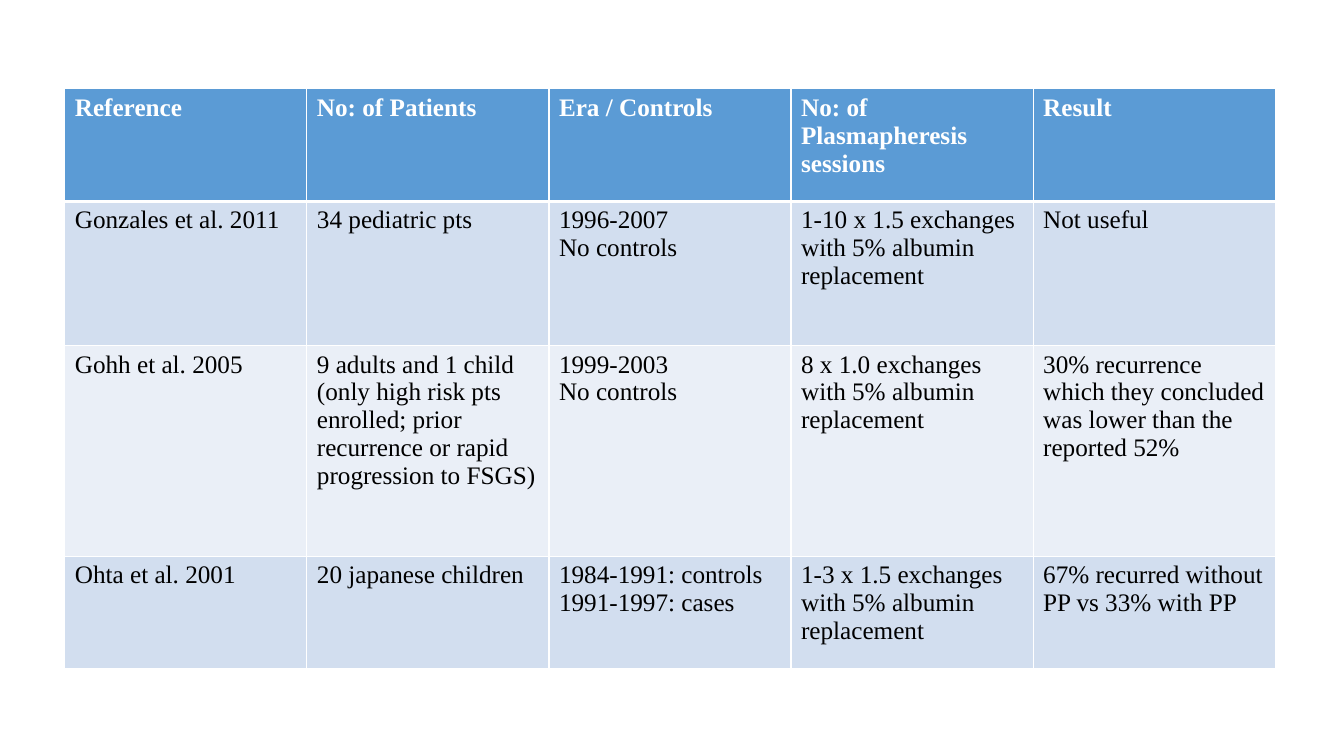
from lxml.etree import SubElement
from pptx import Presentation
from pptx.dml.color import RGBColor as Color
from pptx.oxml.ns import qn
from pptx.util import Pt

FONT = "Times New Roman"
COLORS = {
    "header": "5B9BD5",
    "odd": "D2DEEF",
    "even": "EAEFF7",
    "white": "FFFFFF",
    "black": "000000",
}
COLUMN_WIDTH = 172.94
ROW_HEIGHTS = [80.4, 102.9, 150.6, 80.4]
STUDIES = [
    ["Reference", "No: of Patients", "Era / Controls",
     "No: of Plasmapheresis sessions", "Result"],
    ["Gonzales et al. 2011", "34 pediatric pts", "1996-2007\nNo controls",
     "1-10 x 1.5 exchanges with 5% albumin replacement", "Not useful"],
    ["Gohh et al. 2005",
     "9 adults and 1 child (only high risk pts enrolled; "
     "prior recurrence or rapid progression to FSGS)",
     "1999-2003\nNo controls",
     "8 x 1.0 exchanges with 5% albumin replacement",
     "30% recurrence which they concluded was lower than the reported 52%"],
    ["Ohta et al. 2001", "20 japanese children",
     "1984-1991: controls\n1991-1997: cases",
     "1-3 x 1.5 exchanges with 5% albumin replacement",
     "67% recurred without PP vs 33% with PP"],
]


def add_border(cell, side, width):
    """Draw one white edge of a table cell."""
    properties = cell._tc.get_or_add_tcPr()
    line = SubElement(properties, qn(f"a:ln{side}"), w=str(Pt(width)))
    fill = SubElement(line, qn("a:solidFill"))
    SubElement(fill, qn("a:srgbClr"), val=COLORS["white"])


def write_text(cell, text, color, bold):
    """Write each line of the text as its own paragraph."""
    frame = cell.text_frame
    for number, line in enumerate(text.split("\n")):
        para = frame.add_paragraph() if number else frame.paragraphs[0]
        span = para.add_run()
        span.text = line
        span.font.name = FONT
        span.font.size = Pt(18)
        span.font.bold = bold
        span.font.color.rgb = Color.from_string(COLORS[color])


def style_cell(cell, row):
    """Set the borders and the banded fill of a cell."""
    widths = {"L": 1, "R": 1, "T": 3 if row == 1 else 1, "B": 3 if row == 0 else 1}
    for side, width in widths.items():
        add_border(cell, side, width)
    band = "header" if row == 0 else "odd" if row % 2 else "even"
    cell.fill.solid()
    cell.fill.fore_color.rgb = Color.from_string(COLORS[band])


def add_study_table(page, left, top):
    """Add the table that compares the studies."""
    columns = len(STUDIES[0])
    table = page.shapes.add_table(
        len(STUDIES), columns, Pt(left), Pt(top),
        Pt(columns * COLUMN_WIDTH), Pt(sum(ROW_HEIGHTS))).table
    for column in table.columns:
        column.width = Pt(COLUMN_WIDTH)
    for row, (height, texts) in enumerate(zip(ROW_HEIGHTS, STUDIES)):
        table.rows[row].height = Pt(height)
        for column, text in enumerate(texts):
            cell = table.cell(row, column)
            style_cell(cell, row)
            write_text(cell, text, "black" if row else "white", row == 0)


def main():
    """Build and save the slide."""
    deck = Presentation()
    deck.slide_width, deck.slide_height = Pt(960), Pt(540)
    page = deck.slides.add_slide(deck.slide_layouts[6])
    add_study_table(page, 46.3, 63.5)
    deck.save("out.pptx")


if __name__ == "__main__":
    main()
